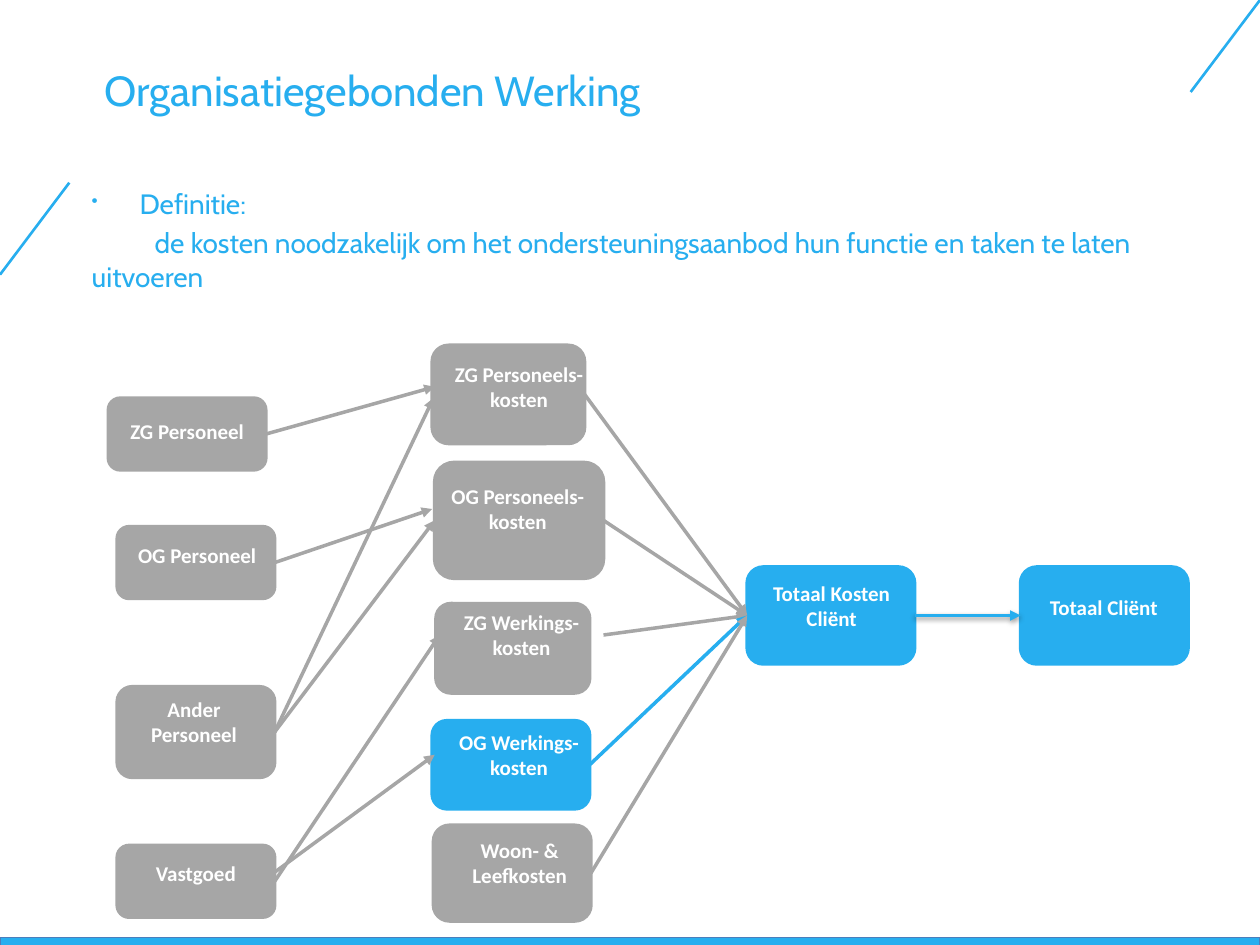
from lxml.etree import SubElement
from pptx import Presentation
from pptx.dml.color import RGBColor
from pptx.enum.shapes import MSO_CONNECTOR as Line, MSO_SHAPE as Shape
from pptx.enum.text import PP_ALIGN as Align
from pptx.oxml.ns import qn
from pptx.util import Inches, Pt

BLUE, GREY, WHITE = "27AEEF", "A6A6A6", "FFFFFF"
LEFT, RIGHT = 1, 3


def paint(colour_format, colour):
    colour_format.rgb = RGBColor.from_string(colour)


def add_block(slide, kind, at, fill, outline, weight):
    block = slide.shapes.add_shape(kind, *map(Inches, at))
    block.shadow.inherit = False
    block.fill.solid()
    paint(block.fill.fore_color, fill)
    paint(block.line.color, outline)
    block.line.width = Pt(weight)
    return block


def add_text(slide, at, text, size, font, colour, bold=False, align=Align.LEFT):
    frame = slide.shapes.add_textbox(*map(Inches, at)).text_frame
    frame.word_wrap = True
    frame.text = text
    for paragraph in frame.paragraphs:
        paragraph.alignment = align
        for run in paragraph.runs:
            run.font.size = Pt(size)
            run.font.name = font
            run.font.bold = bold
            paint(run.font.color, colour)
    return frame


def add_node(slide, at, colour, label, label_at):
    node = add_block(slide, Shape.ROUNDED_RECTANGLE, at, colour, colour, 2)
    add_text(slide, label_at, label, 12, "Calibri", WHITE, True, Align.CENTER)
    return node


def add_line(slide, start, end, colour, weight):
    line = slide.shapes.add_connector(Line.STRAIGHT, *map(Inches, (*start, *end)))
    paint(line.line.color, colour)
    line.line.width = Pt(weight)
    SubElement(line._element.spPr, qn("a:effectLst"))
    return line


def add_arrow(slide, source, target, colour=GREY):
    start = source if isinstance(source, tuple) else (0, 0)
    end = target if isinstance(target, tuple) else (1, 1)
    arrow = add_line(slide, start, end, colour, 2)
    SubElement(arrow.line._get_or_add_ln(), qn("a:tailEnd"), type="triangle")
    if source is not start:
        arrow.begin_connect(source, RIGHT)
    if target is not end:
        arrow.end_connect(target, LEFT)
    return arrow


def add_soft_shadow(arrow):
    effects = arrow._element.spPr.find(qn("a:effectLst"))
    shadow = SubElement(effects, qn("a:outerShdw"), blurRad=str(Pt(3.1)),
                        dist=str(Pt(1.6)), dir="5400000", rotWithShape="0")
    black = SubElement(shadow, qn("a:srgbClr"), val="000000")
    SubElement(black, qn("a:alpha"), val="38000")


def add_definition(slide):
    text = ("Definitie:\nde kosten noodzakelijk om het ondersteuningsaanbod "
            "hun functie en taken te laten uitvoeren")
    frame = add_text(slide, (0.63, 1.43, 9.07, 1), text, 16, "Cabin", BLUE)
    heading, explanation = frame.paragraphs
    props = heading._p.get_or_add_pPr()
    props.set("marL", str(Inches(0.38)))
    props.set("indent", str(Inches(-0.38)))
    bullet_colour = SubElement(props, qn("a:buClr"))
    SubElement(bullet_colour, qn("a:srgbClr"), val=BLUE)
    SubElement(props, qn("a:buSzPct"), val="65000")
    SubElement(props, qn("a:buChar"), char="•")
    explanation._p.get_or_add_pPr().set("indent", str(Inches(0.5)))
    explanation.space_before = Pt(3.2)


def add_cost_flow(slide):
    zg_staff = add_node(slide, (0.86, 3.16, 1.25, 0.57), GREY,
                        "ZG Personeel", (0.86, 3.27, 1.25, 0.3))
    og_staff = add_node(slide, (0.93, 4.18, 1.25, 0.57), GREY,
                        "OG Personeel", (0.95, 4.26, 1.23, 0.3))
    other_staff = add_node(slide, (0.93, 5.45, 1.25, 0.72), GREY,
                           "Ander Personeel", (0.93, 5.48, 1.22, 0.5))
    property_node = add_node(slide, (0.93, 6.71, 1.25, 0.57), GREY,
                             "Vastgoed", (0.93, 6.78, 1.25, 0.3))
    zg_staff_costs = add_node(slide, (3.43, 2.74, 1.21, 0.78), GREY,
                              "ZG Personeels-kosten", (3.45, 2.82, 1.34, 0.5))
    og_staff_costs = add_node(slide, (3.45, 3.67, 1.34, 0.92), GREY,
                              "OG Personeels-kosten", (3.43, 3.79, 1.36, 0.5))
    add_node(slide, (3.46, 4.79, 1.22, 0.71), GREY,
             "ZG Werkings-kosten", (3.49, 4.79, 1.3, 0.5))
    og_operating = add_node(slide, (3.43, 5.72, 1.25, 0.7), BLUE,
                            "OG Werkings-kosten", (3.45, 5.74, 1.34, 0.5))
    living_costs = add_node(slide, (3.44, 6.55, 1.25, 0.76), GREY,
                            "Woon- & Leefkosten", (3.46, 6.6, 1.33, 0.5))
    total_costs = add_node(slide, (5.93, 4.5, 1.33, 0.77), BLUE,
                           "Totaal Kosten Cliënt", (5.94, 4.56, 1.32, 0.5))
    total_client = add_node(slide, (8.1, 4.5, 1.33, 0.77), BLUE,
                            "Totaal Cliënt", (8.1, 4.67, 1.32, 0.3))

    for source, target in (
        (zg_staff, (3.45, 3.07)),
        (og_staff, (3.43, 4.04)),
        (other_staff, og_staff_costs),
        (other_staff, (3.44, 3.16)),
        ((2.17, 6.93), (3.45, 5.99)),
        (property_node, (3.49, 5.04)),
    ):
        add_arrow(slide, source, target)
    for source in (og_staff_costs, (4.79, 5.04), og_operating,
                   living_costs, zg_staff_costs):
        colour = BLUE if source is og_operating else GREY
        add_arrow(slide, source, total_costs, colour)
    add_soft_shadow(add_arrow(slide, total_costs, total_client, BLUE))


def main():
    deck = Presentation()
    deck.slide_width, deck.slide_height = Inches(10), Inches(7.5)
    slide = deck.slides.add_slide(deck.slide_layouts[6])
    add_block(slide, Shape.RECTANGLE, (0, 7.44, 10, 0.07), BLUE, "4B7EBC", 0.75)
    add_line(slide, (0.55, 1.45), (0, 2.18), BLUE, 1.5)
    add_line(slide, (10, 0), (9.45, 0.73), BLUE, 1.5)
    add_text(slide, (0.73, 0.46, 8.28, 0.63), "Organisatiegebonden Werking",
             24, "Cabin", BLUE)
    add_definition(slide)
    add_cost_flow(slide)
    deck.save("out.pptx")


if __name__ == "__main__":
    main()
